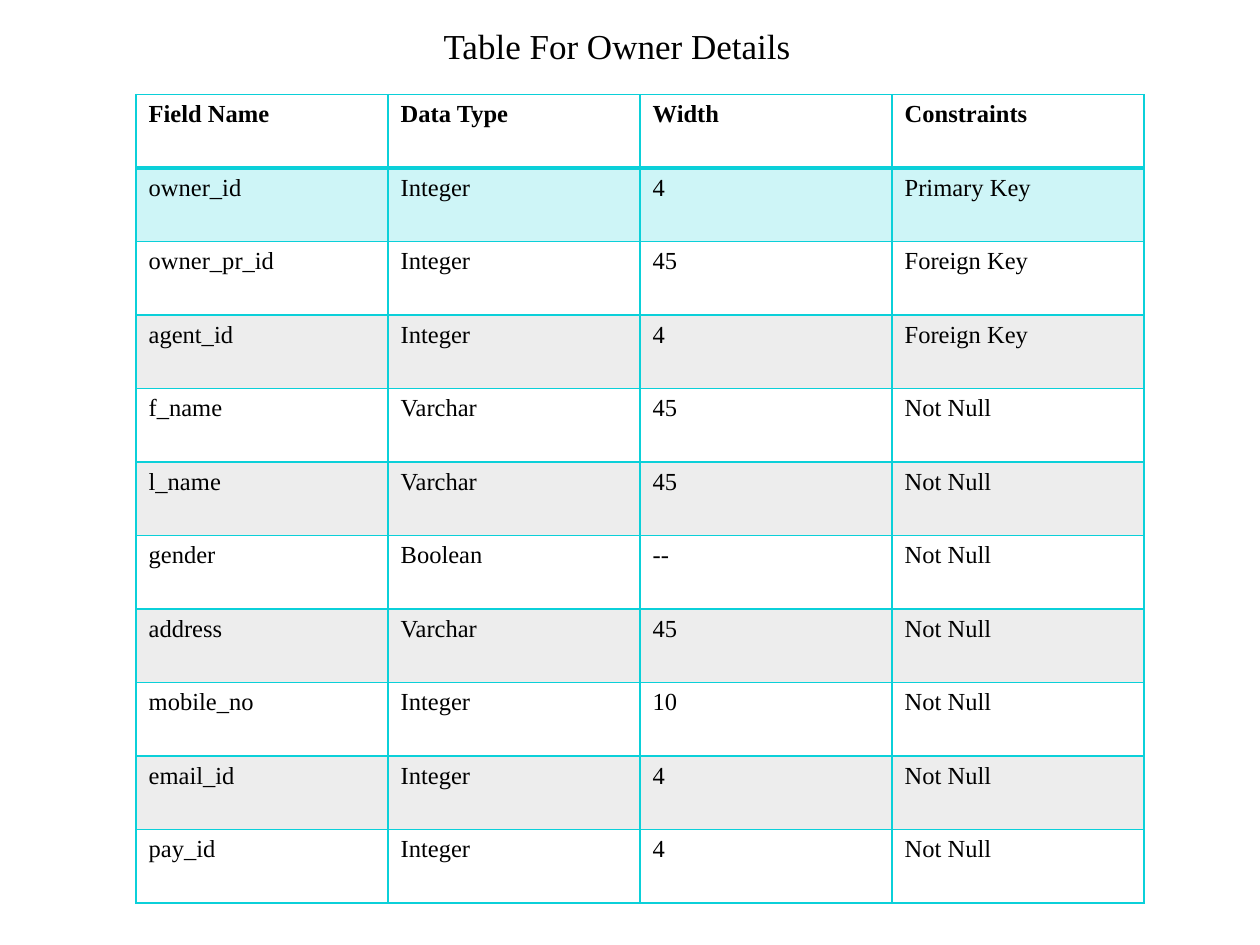
from pptx import Presentation
from pptx.dml.color import RGBColor
from pptx.enum.text import MSO_ANCHOR as Anchor, PP_ALIGN as Align
from pptx.oxml import parse_xml
from pptx.oxml.ns import nsdecls, qn
from pptx.util import Inches, Pt
from lxml.etree import SubElement

FONT = "Times New Roman"
BLACK, CYAN, GREY = "000000", "0BD0D9", "EDEDED"
HEADER = ("Field Name", "Data Type", "Width", "Constraints")
FIELDS = (
    ("owner_id", "Integer", "4", "Primary Key"),
    ("owner_pr_id", "Integer", "45", "Foreign Key"),
    ("agent_id", "Integer", "4", "Foreign Key"),
    ("f_name", "Varchar", "45", "Not Null"),
    ("l_name", "Varchar", "45", "Not Null"),
    ("gender", "Boolean", "--", "Not Null"),
    ("address", "Varchar", "45", "Not Null"),
    ("mobile_no", "Integer", "10", "Not Null"),
    ("email_id", "Integer", "4", "Not Null"),
    ("pay_id", "Integer", "4", "Not Null"),
)


def rgb(color):
    """Turn a hex string into a colour."""
    return RGBColor.from_string(color)


def format_text(p, size, bold=False):
    """Format every run of a paragraph."""
    for r in p.runs:
        r.font.name = FONT
        r.font.size = Pt(size)
        r.font.bold = bold
        r.font.color.rgb = rgb(BLACK)


def set_borders(cell, top=1, bottom=1):
    """Draw the four borders of a cell, with widths in points."""
    tcPr = cell._tc.get_or_add_tcPr()
    widths = {"lnL": 1, "lnR": 1, "lnT": top, "lnB": bottom}
    for i, (tag, width) in enumerate(widths.items()):
        tcPr.insert(i, parse_xml(
            f'<a:{tag} {nsdecls("a")} w="{Pt(width)}"><a:solidFill>'
            f'<a:srgbClr val="{CYAN}"/></a:solidFill></a:{tag}>'))


def fill_cell(cell, row):
    """Fill a cell by its row: cyan tint for the key, grey for odd rows."""
    if row % 2 == 0:
        cell.fill.background()
        return
    cell.fill.solid()
    cell.fill.fore_color.rgb = rgb(CYAN if row == 1 else GREY)
    if row == 1:
        color = cell._tc.tcPr.find(".//" + qn("a:srgbClr"))
        SubElement(color, qn("a:alpha")).set("val", "20000")


def place_title(slide, text, left, top, width, height):
    """Place and format the title placeholder in the given box."""
    title = slide.shapes.title
    title.left, title.top, title.width, title.height = left, top, width, height
    tf = title.text_frame
    tf.text = text
    tf.vertical_anchor = Anchor.MIDDLE
    p = tf.paragraphs[0]
    p.alignment = Align.LEFT
    p.line_spacing = 0.9
    format_text(p, 20)


def add_field_table(slide, left, top, width, height):
    """Add the table of owner fields in the given box."""
    rows = (HEADER, *FIELDS)
    table = slide.shapes.add_table(
        len(rows), len(HEADER), left, top, width, height).table
    table.first_row = table.horz_banding = False
    for i, row in enumerate(rows):
        for j, text in enumerate(row):
            cell = table.cell(i, j)
            cell.text = text
            format_text(cell.text_frame.paragraphs[0], 14, bold=i == 0)
            fill_cell(cell, i)
            set_borders(cell, top=2 if i == 1 else 1, bottom=2 if i == 0 else 1)


def main():
    """Build the slide and save it."""
    prs = Presentation()
    prs.slide_width, prs.slide_height = Inches(10), Inches(7.5)
    slide = prs.slides.add_slide(prs.slide_layouts[5])
    place_title(slide, "Table For Owner Details",
                Inches(3.42), Inches(0.17), Inches(3.33), Inches(0.42))
    add_field_table(slide, Inches(1.08), Inches(0.75), Inches(8), Inches(6.42))
    prs.save("out.pptx")


if __name__ == "__main__":
    main()
